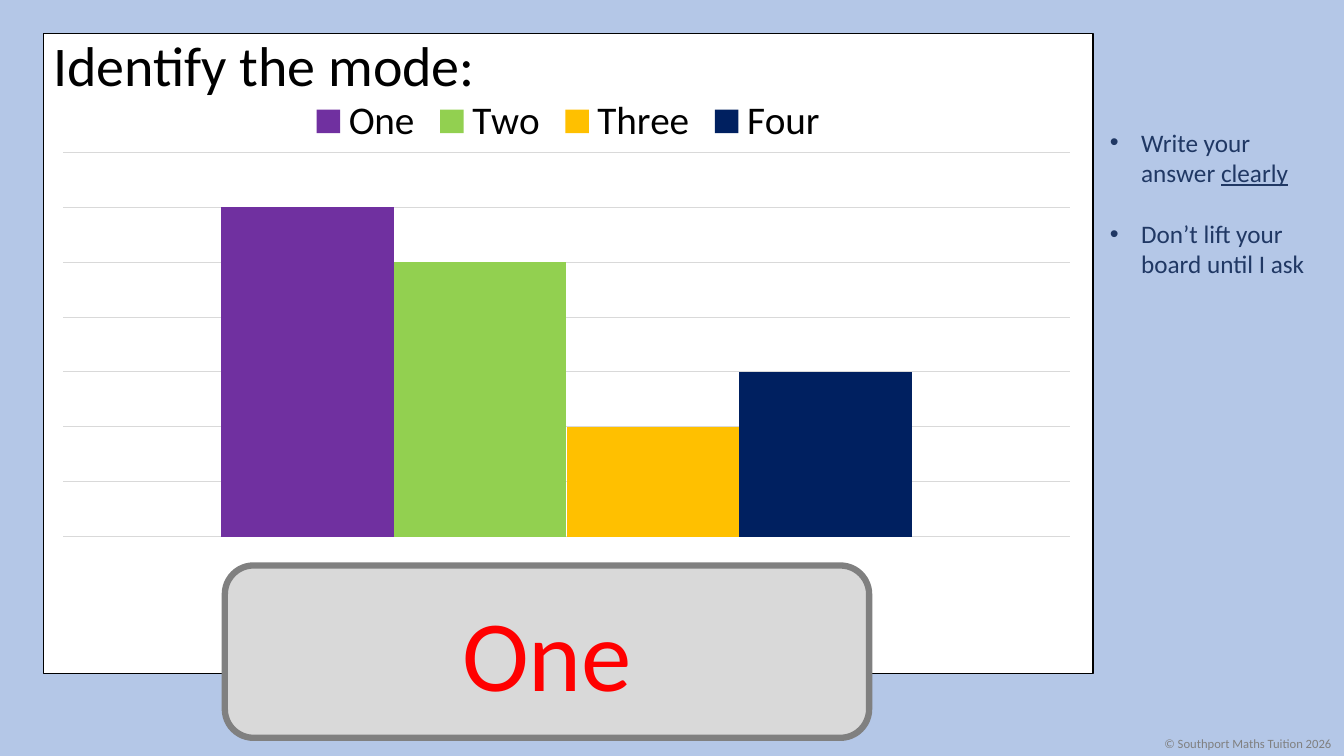
from lxml import etree
from pptx import Presentation
from pptx.chart.data import CategoryChartData
from pptx.dml.color import RGBColor
from pptx.enum.chart import XL_CHART_TYPE as ChartType, XL_LEGEND_POSITION as LegendPosition
from pptx.enum.shapes import MSO_SHAPE as Shape
from pptx.enum.text import MSO_ANCHOR as Anchor, PP_ALIGN as Align
from pptx.oxml import parse_xml
from pptx.oxml.ns import nsdecls, qn
from pptx.util import Inches, Pt


def paint(color_format, hex_color):
    color_format.rgb = RGBColor.from_string(hex_color)


def style_font(font, size, hex_color):
    for name, value in {"name": "Calibri", "size": Pt(size)}.items():
        setattr(font, name, value)
    paint(font.color, hex_color)


deck = Presentation()
deck.slide_width, deck.slide_height = Inches(13.33), Inches(7.5)
page = deck.slides.add_slide(deck.slide_layouts[6])
page.background.fill.solid()
paint(page.background.fill.fore_color, "B4C7E7")

# White panel and answer card
cards = []
for kind, place, fill, line, width in [
    (Shape.RECTANGLE, (0.43, 0.33, 10.41, 6.35), "FFFFFF", "000000", 1),
    (Shape.ROUNDED_RECTANGLE, (2.23, 5.61, 6.39, 1.71), "D9D9D9", "808080", 4.5),
]:
    card = page.shapes.add_shape(kind, *map(Inches, place))
    card.shadow.inherit = False
    card.fill.solid()
    paint(card.fill.fore_color, fill)
    paint(card.line.color, line)
    card.line.width = Pt(width)
    cards.append(card)
panel, answer = cards

answer.text_frame.vertical_anchor = Anchor.MIDDLE
para = answer.text_frame.paragraphs[0]
para.text, para.alignment = "One", Align.CENTER
style_font(para.font, 72, "FF0000")

# Question and copyright line
for text, place, size, color, wrap, spacing in [
    ("Identify the mode:", (0.43, 0.33, 10.41, 0.7), 40, "000000", True, 0.9),
    ("© Southport Maths Tuition 2026", (11.45, 7.25, 1.88, 0.25), 9, "808080", False, 1.0),
]:
    box = page.shapes.add_textbox(*map(Inches, place))
    box.text_frame.word_wrap = wrap
    para = box.text_frame.paragraphs[0]
    para.text, para.line_spacing = text, spacing
    style_font(para.font, size, color)

# Bulleted reminders; each span is (text, underlined)
reminders = [
    [("Write your answer ", False), ("clearly", True)],
    [("Don’t lift your board until I ask", False)],
]
box = page.shapes.add_textbox(*map(Inches, (10.91, 1.21, 2.32, 1.62)))
box.text_frame.word_wrap = True
for index, reminder in enumerate(reminders):
    para = box.text_frame.add_paragraph() if index else box.text_frame.paragraphs[0]
    properties = para._p.get_or_add_pPr()
    properties.set("marL", str(Inches(0.31)))
    properties.set("indent", str(Inches(-0.31)))
    etree.SubElement(properties, qn("a:buFont")).set("typeface", "Arial")
    etree.SubElement(properties, qn("a:buChar")).set("char", "•")
    if index:
        para.space_before = Pt(22)
    style_font(para.font, 18, "203864")
    for text, underlined in reminder:
        span = para.add_run()
        span.text = text
        style_font(span.font, 18, "203864")
        if underlined:
            span.font.underline = True

# Bar chart
bars = [("One", 6, "7030A0"), ("Two", 5, "92D050"), ("Three", 2, "FFC000"), ("Four", 3, "002060")]
data = CategoryChartData()
data.categories = ["1"]
for name, value, color in bars:
    data.add_series(name, [value])
chart = page.shapes.add_chart(
    ChartType.COLUMN_CLUSTERED, *map(Inches, (0.43, 0.82, 10.41, 5.17)), data
).chart
chart.has_title = False
style_font(chart.font, 10, "000000")
plot = chart.plots[0]
for name, value in {"gap_width": 182, "overlap": 0, "vary_by_categories": False}.items():
    setattr(plot, name, value)
for series, (name, value, color) in zip(plot.series, bars):
    series.format.fill.solid()
    paint(series.format.fill.fore_color, color)

# Hidden axes with gridlines at each unit
chart.category_axis.visible = False
axis = chart.value_axis
for name, value in {"visible": False, "minimum_scale": 0, "maximum_scale": 7,
                    "major_unit": 1, "has_major_gridlines": True}.items():
    setattr(axis, name, value)
grid = axis.major_gridlines.format.line
paint(grid.color, "D9D9D9")
grid.width = Pt(0.75)

# Legend and plot area
chart.has_legend = True
chart.legend.position = LegendPosition.TOP
chart.legend.include_in_layout = False
style_font(chart.legend.font, 28, "000000")
area = chart._chartSpace.chart.plotArea
for old_layout in area.findall(qn("c:layout")):
    area.remove(old_layout)
area.insert(0, parse_xml(
    f'<c:layout {nsdecls("c")}><c:manualLayout><c:layoutTarget val="inner"/>'
    '<c:xMode val="edge"/><c:yMode val="edge"/><c:x val="0.019"/><c:y val="0.134"/>'
    '<c:w val="0.959"/><c:h val="0.737"/></c:manualLayout></c:layout>'))

# Bring the answer card in front of the chart
page.shapes._spTree.append(answer._element)

deck.save("out.pptx")
